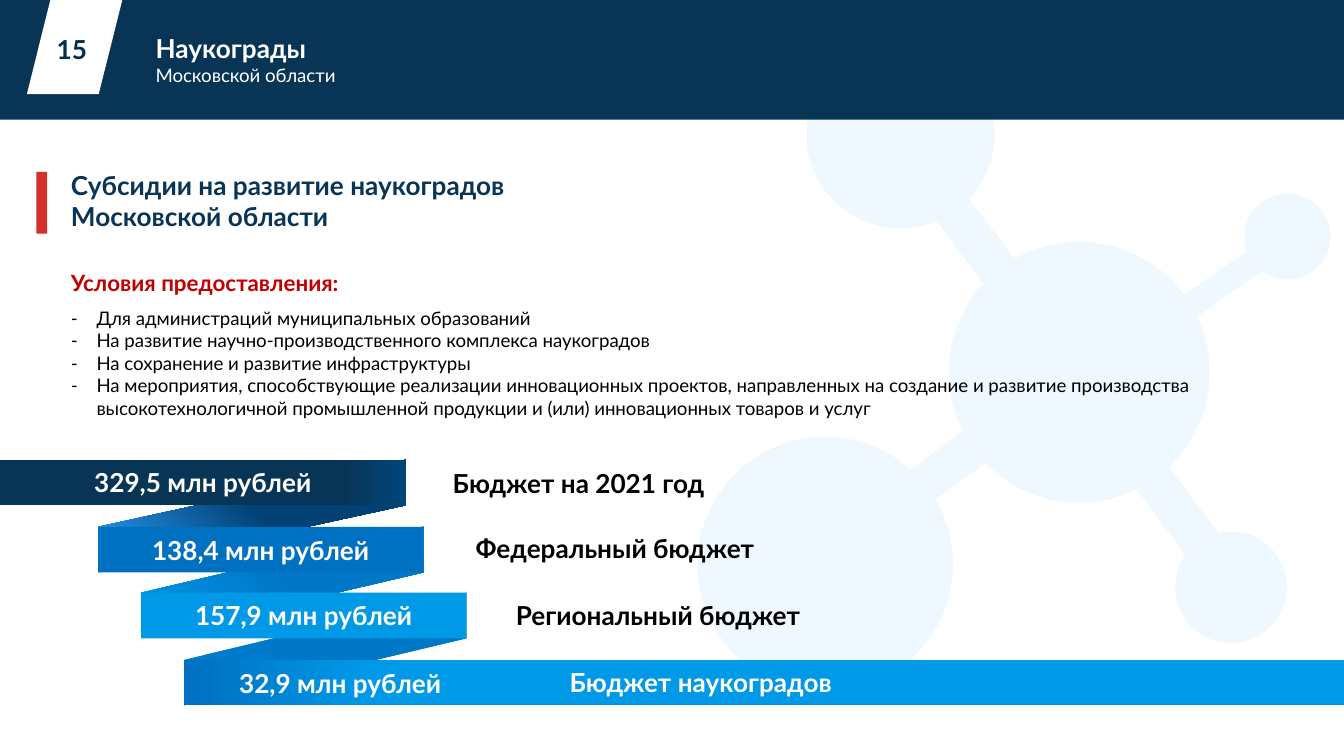
from lxml import etree
from pptx import Presentation
from pptx.dml.color import RGBColor
from pptx.enum import shapes, text
from pptx.oxml.ns import qn
from pptx.util import Inches, Pt

FONT = "Lato"
NAVY, WHITE, BLACK, PALE = "083455", "FFFFFF", "000000", "EFF8FF"
BAR_HEIGHT = 0.34

# Molecule: circles as centre x, centre y, diameter; bonds as corner points
ATOMS = [(8.03, 2.77, 1.94), (6.7, 1, 1.4), (6.14, 4.2, 1.9),
         (9.58, 1.76, 0.64), (9.16, 4.37, 0.83)]
BONDS = [
    [(7.83, 2.29), (7.58, 2.46), (6.81, 1.43), (7.04, 1.26)],
    [(8.4, 3.08), (8.17, 3.25), (8.93, 4.28), (9.16, 4.09)],
    [(8.46, 2.67), (8.36, 2.5), (9.41, 1.78), (9.51, 1.93)],
    [(7.69, 3.19), (7.52, 2.94), (6.49, 3.71), (6.66, 3.93)],
]

# Budget bars: left, top, width, fill, gradient angle, amount
BARS = [
    (0, 3.42, 3.02, [(0, "00467A"), (0.16, NAVY)], 180, "329,5 млн рублей"),
    (0.73, 3.92, 2.42, "0070C0", 0, "138,4 млн рублей"),
    (1.05, 4.41, 2.42, "0099E8", 0, "157,9 млн рублей"),
    (1.37, 4.91, 8.63, [(0, "0070C0"), (0.16, "0099E8")], 0, "32,9 млн рублей"),
]
FOLDS = [("2CA1FE", "014174"), ("0099E8", "0077C7"), ("007CCC", "0077C7")]

# Bar captions: left, top, width, wording, colour
CAPTIONS = [
    (3.27, 3.43, 2.15, "Бюджет на 2021 год", BLACK),
    (3.44, 3.91, 2.4, "Федеральный бюджет", BLACK),
    (3.74, 4.41, 2.44, "Региональный бюджет", BLACK),
    (4.14, 4.91, 2.3, "Бюджет наукоградов", WHITE),
]

CONDITIONS = [
    "Для администраций муниципальных образований",
    "На развитие научно-производственного комплекса наукоградов",
    "На сохранение и развитие инфраструктуры",
    "На мероприятия, способствующие реализации инновационных проектов, "
    "направленных на создание и развитие производства высокотехнологичной "
    "промышленной продукции и (или) инновационных товаров и услуг",
]


def color(value):
    return RGBColor.from_string(value)


def paint(shape, fill, angle=0):
    """Fill with one colour, or with gradient stops at a clockwise angle."""
    shape.shadow.inherit = False
    shape.line.fill.background()
    if isinstance(fill, str):
        shape.fill.solid()
        shape.fill.fore_color.rgb = color(fill)
        return shape
    shape.fill.gradient()
    shape.fill.gradient_angle = (360 - angle) % 360
    for stop, (position, value) in zip(shape.fill.gradient_stops, fill):
        stop.position = position
        stop.color.rgb = color(value)
    return shape


def add_block(target, kind, left, top, width, height, fill, angle=0):
    shape = target.shapes.add_shape(
        kind, Inches(left), Inches(top), Inches(width), Inches(height))
    return paint(shape, fill, angle)


def add_polygon(target, points, fill, angle=0):
    corners = [(Inches(x), Inches(y)) for x, y in points]
    builder = target.shapes.build_freeform(*corners[0])
    builder.add_line_segments(corners[1:], close=True)
    return paint(builder.convert_to_shape(), fill, angle)


def write(para, wording, size=14, fill=WHITE, bold=True, align=text.PP_ALIGN.LEFT,
          before=0, bullet=None):
    para.alignment = align
    para.space_before = Pt(before)
    span = para.add_run()
    span.text = wording
    span.font.name = FONT
    span.font.size = Pt(size)
    span.font.bold = bold
    span.font.color.rgb = color(fill)
    if bullet:
        props = para._p.get_or_add_pPr()
        props.set("marL", str(Inches(0.19)))
        props.set("indent", str(-Inches(0.19)))
        etree.SubElement(props, qn("a:buFont")).set("typeface", FONT)
        etree.SubElement(props, qn("a:buChar")).set("char", bullet)


def add_text(page, left, top, width, height, lines, wrap=True):
    """Add a text box; each line is its wording and its format."""
    box = page.shapes.add_textbox(
        Inches(left), Inches(top), Inches(width), Inches(height))
    frame = box.text_frame
    frame.word_wrap = wrap
    frame.auto_size = text.MSO_AUTO_SIZE.SHAPE_TO_FIT_TEXT
    for index, (wording, style) in enumerate(lines):
        para = frame.add_paragraph() if index else frame.paragraphs[0]
        write(para, wording, **style)


def add_molecule(page):
    group = page.shapes.add_group_shape()
    for points in BONDS:
        add_polygon(group, points, PALE)
    for x, y, size in ATOMS:
        add_block(group, shapes.MSO_SHAPE.OVAL,
                  x - size / 2, y - size / 2, size, size, PALE)


def add_header(page):
    add_block(page, shapes.MSO_SHAPE.RECTANGLE, 0, 0, 10, 0.89, NAVY)
    add_block(page, shapes.MSO_SHAPE.PARALLELOGRAM, 0.2, 0, 0.71, 0.7, WHITE)
    add_text(page, 1.06, 0.19, 8.94, 0.5, [
        ("Наукограды", {}),
        ("Московской области", dict(size=10, bold=False))])
    add_text(page, 0.26, 0.2, 0.55, 0.34, [
        ("15", dict(fill="002D50", align=text.PP_ALIGN.CENTER))])


def add_conditions(page):
    # Red marker: a flat bar turned upright
    marker = add_block(page, shapes.MSO_SHAPE.RECTANGLE,
                       0.08, 1.47, 0.46, 0.08, "D42E2D")
    marker.rotation = 90
    add_text(page, 0.43, 1.21, 8.27, 0.57, [
        ("Субсидии на развитие наукоградов", dict(fill=NAVY)),
        ("Московской области", dict(fill=NAVY))])
    lines = [("Условия предоставления:", dict(size=12, fill="C00000"))]
    for index, wording in enumerate(CONDITIONS):
        lines.append((wording, dict(size=10, fill=BLACK, bold=False, bullet="-",
                                    before=0 if index else 6)))
    add_text(page, 0.43, 1.95, 9.14, 1.23, lines)


def add_budget(page):
    # Folds run from the right end of a bar to the left end of the next
    for bar, following, (start, end) in zip(BARS, BARS[1:], FOLDS):
        right, top = bar[0] + bar[2], bar[1]
        left, bottom = following[:2]
        add_polygon(page, [(left, bottom + BAR_HEIGHT), (right, top + BAR_HEIGHT),
                           (right, top), (left, bottom)],
                    [(0, start), (0.53, end)], 315)

    # Bars with amounts; the last one runs off to the right, so its text is indented
    for left, top, width, fill, angle, amount in BARS:
        last = amount == BARS[-1][-1]
        bar = add_block(page, shapes.MSO_SHAPE.RECTANGLE,
                        left, top, width, BAR_HEIGHT, fill, angle)
        frame = bar.text_frame
        frame.margin_left = Inches(0.41 if last else 0.07)
        frame.margin_right = Inches(0.07)
        frame.margin_top = frame.margin_bottom = Inches(0.04)
        frame.vertical_anchor = text.MSO_ANCHOR.MIDDLE
        align = text.PP_ALIGN.LEFT if last else text.PP_ALIGN.CENTER
        write(frame.paragraphs[0], amount, align=align)

    for left, top, width, wording, fill in CAPTIONS:
        add_text(page, left, top, width, BAR_HEIGHT,
                 [(wording, dict(fill=fill))], wrap=False)


def main():
    deck = Presentation()
    # Widescreen, 16 to 9
    deck.slide_width = Inches(10)
    deck.slide_height = Inches(10 * 9 / 16)
    page = deck.slides.add_slide(deck.slide_layouts[6])
    add_molecule(page)
    add_header(page)
    add_conditions(page)
    add_budget(page)
    deck.save("out.pptx")


if __name__ == "__main__":
    main()
